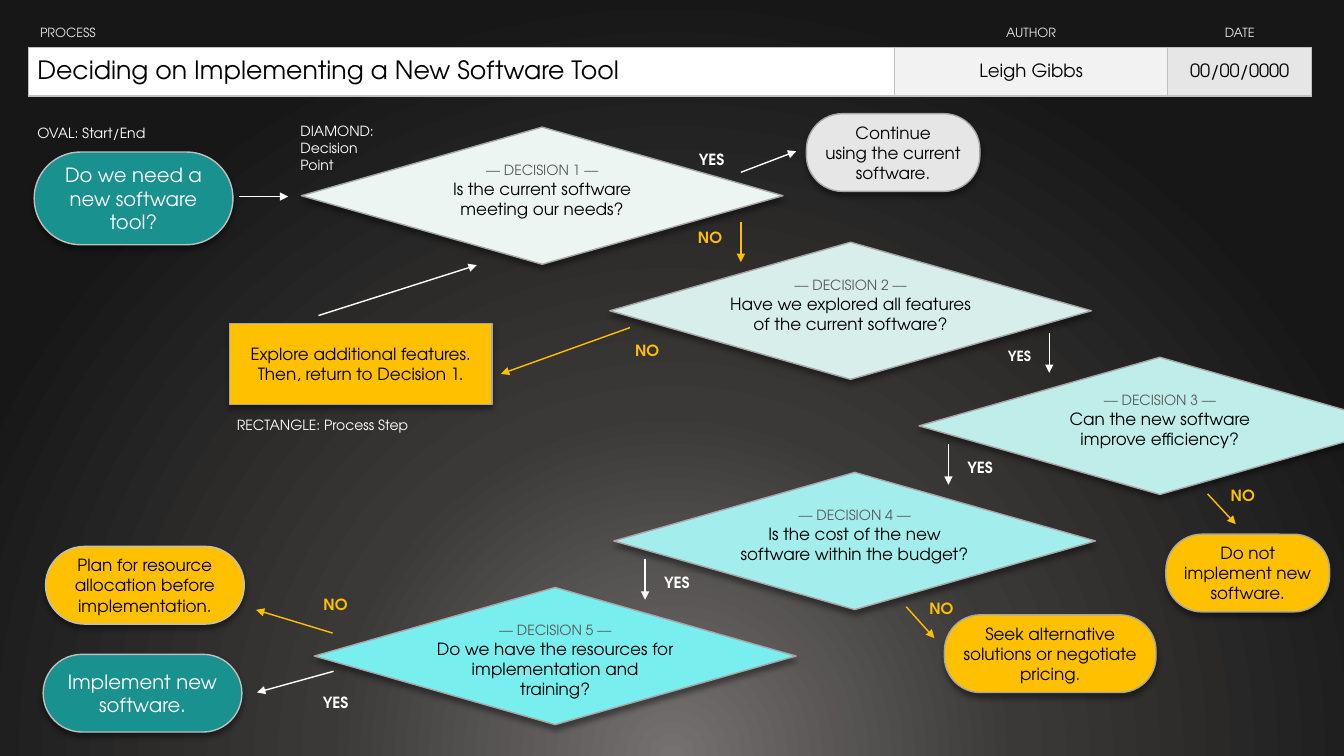
from pptx import Presentation
from pptx.dml.color import RGBColor
from pptx.enum.shapes import MSO_CONNECTOR, MSO_SHAPE
from pptx.enum.text import MSO_ANCHOR, PP_ALIGN
from pptx.oxml import parse_xml
from pptx.oxml.ns import qn
from pptx.util import Pt

FONT = "TeX Gyre Adventor"
NAMESPACE = 'xmlns:a="http://schemas.openxmlformats.org/drawingml/2006/main"'
NO_STYLE = "{2D5ABB26-0587-4C30-8999-92F81FD0307C}"
COLORS = {
    "white": "FFFFFF", "black": "000000", "teal": "18918F", "gold": "FFC000",
    "pale": "E7E6E6", "caption": "595959", "outline": "A6A6A6", "border": "BFBFBF",
    "title": "FFFFFF", "author": "F2F2F2", "date": "E6E6E6",
    "glow": "767171", "charcoal": "3B3838", "night": "181717",
    "decision 1": "EDF5F3", "decision 2": "D7EEEB", "decision 3": "BFEEEA",
    "decision 4": "A3EEED", "decision 5": "79EEEE",
}
DECISION_SIZE = (344, 98)
DECISION_TOP, DECISION_STEP = 90.8, 82.2
DECISIONS = [
    (215.3, "Is the current software meeting our needs?"),
    (435.6, "Have we explored all features of the current software?"),
    (656.5, "Can the new software improve efficiency?"),
    (438.5, "Is the cost of the new software within the budget?"),
    (224.6, "Do we have the resources for implementation and training?"),
]
OVALS = [
    ((24.4, 108.6, 142, 66.2), ["Do we need a new software tool?"], "teal", 14, 0.5),
    ((576, 81.2, 124, 55.5), ["Continue", "using the current software."], "pale", 12, 0.464),
    ((832.8, 381.6, 117, 55.5), ["Do not implement new software."], "gold", 12, 0.464),
    ((674.6, 439.2, 151.2, 55.5), ["Seek alternative solutions or negotiate pricing."], "gold", 12, 0.464),
    ((30.8, 467.4, 142, 55.5), ["Implement new software."], "teal", 14, 0.5),
    ((32.5, 390.3, 142, 55.5), ["Plan for resource allocation before implementation."], "gold", 12, 0.5),
]
BRANCHES = [
    ("YES", (491, 103, 34.6, 20.9), (529.2, 123.1), (568.8, 108), 11),
    ("NO", (488.9, 159.1, 36.7, 20.9), (529.2, 158.4), (529.2, 187.2), 11),
    ("NO", (445, 234, 34.6, 32.4), (450, 234), (357.8, 267.1), 11),
    ("YES", (709.9, 243.4, 36.7, 20.9), (749.5, 237.6), (749.5, 266.4), 10),
    ("YES", (681.8, 323.3, 36.7, 20.9), (677.5, 317.5), (677.5, 346.3), 11),
    ("NO", (870.5, 337.7, 34.6, 32.4), (862.6, 352.8), (882.7, 374.4), 11),
    ("YES", (465.1, 405.4, 36.7, 20.9), (460.8, 399.6), (460.8, 428.4), 11),
    ("NO", (655.2, 418.3, 34.6, 32.4), (647.3, 433.4), (667.4, 455.8), 11),
    ("NO", (216, 415.4, 47.5, 32.4), (237.6, 452.2), (182.9, 435.6), 11),
    ("YES", (222.5, 488.2, 34.6, 26.6), (238.3, 479.5), (183.6, 494.6), 11),
]
ARROWS = [((170.6, 140.4), (205.9, 140.4)), ((227.5, 225.4), (340.6, 189.4))]
NOTES = [
    ((25.2, 84.2, 99.4, 21.6), ["OVAL: Start/End"]),
    ((213.1, 84.2, 66.2, 43.2), ["DIAMOND:", "Decision", "Point"]),
    ((167.8, 293, 136.8, 21.6), ["RECTANGLE: Process Step"]),
]


def rgb(name):
    """Return the named colour."""
    return RGBColor.from_string(COLORS[name])


def write_text(frame, lines, align, margin=1.5, anchor=MSO_ANCHOR.MIDDLE):
    """Fill a text frame with (text, size, colour, bold) lines."""
    frame.word_wrap = True
    frame.vertical_anchor = anchor
    frame.margin_left = frame.margin_right = Pt(margin)
    frame.margin_top = frame.margin_bottom = Pt(margin)
    for index, (text, size, color, bold) in enumerate(lines):
        paragraph = frame.paragraphs[0] if index == 0 else frame.add_paragraph()
        paragraph.text = text
        paragraph.alignment = align
        style_font(paragraph, size, color, bold)


def style_font(paragraph, size, color, bold=False):
    """Set the font of a paragraph."""
    font = paragraph.font
    font.name, font.size, font.bold = FONT, Pt(size), bold
    font.color.rgb = rgb(color)


def add_block(slide, kind, box, fill, outline="outline"):
    """Add an outlined shape with a soft shadow below it."""
    shape = slide.shapes.add_shape(kind, *map(Pt, box))
    shape.fill.solid()
    shape.fill.fore_color.rgb = rgb(fill)
    shape.line.color.rgb = rgb(outline)
    shape.line.width = Pt(1)
    shape.shadow.inherit = False
    effects = shape._element.spPr.find(qn("a:effectLst"))
    effects.append(parse_xml(
        f'<a:outerShdw {NAMESPACE} blurRad="{Pt(4)}" dist="{Pt(3)}" dir="5400000" algn="t" rotWithShape="0">'
        f'<a:srgbClr val="{COLORS["black"]}"><a:alpha val="40000"/></a:srgbClr></a:outerShdw>'))
    return shape


def add_decision(slide, box, number, question):
    """Add a numbered decision diamond."""
    shape = add_block(slide, MSO_SHAPE.FLOWCHART_DECISION, box, f"decision {number}")
    lines = [(f"–– DECISION {number} ––", 10, "caption", False), (question, 12, "black", False)]
    write_text(shape.text_frame, lines, PP_ALIGN.CENTER, 0, MSO_ANCHOR.TOP)


def add_oval(slide, box, texts, fill, size, roundness):
    """Add a rounded start or end step."""
    outline = "border" if roundness == 0.5 else "outline"
    shape = add_block(slide, MSO_SHAPE.ROUNDED_RECTANGLE, box, fill, outline)
    shape.adjustments[0] = roundness
    color = "white" if fill == "teal" else "black"
    write_text(shape.text_frame, [(text, size, color, False) for text in texts], PP_ALIGN.CENTER)


def add_process(slide, box, text):
    """Add a rectangular process step."""
    shape = add_block(slide, MSO_SHAPE.FLOWCHART_PROCESS, box, "gold")
    write_text(shape.text_frame, [(text, 12, "black", False)], PP_ALIGN.CENTER)


def add_label(slide, box, texts, size=10, color="white", bold=False, align=PP_ALIGN.LEFT):
    """Add a text label."""
    label = slide.shapes.add_textbox(*map(Pt, box))
    write_text(label.text_frame, [(text, size, color, bold) for text in texts], align)


def add_arrow(slide, start, end, color="white"):
    """Add a straight arrow."""
    arrow = slide.shapes.add_connector(MSO_CONNECTOR.STRAIGHT, *map(Pt, start + end))
    arrow.line.color.rgb = rgb(color)
    arrow.line.width = Pt(1)
    arrow.line._get_or_add_ln().append(parse_xml(f'<a:tailEnd {NAMESPACE} type="triangle"/>'))
    arrow._element.spPr.append(parse_xml(f"<a:effectLst {NAMESPACE}/>"))


def add_branch(slide, answer, box, start, end, size):
    """Add an arrow with its answer."""
    color = "gold" if answer == "NO" else "white"
    add_arrow(slide, start, end, color)
    add_label(slide, box, [answer], size, color, True, PP_ALIGN.CENTER)


def add_borders(cell, sides):
    """Draw cell borders, given as a width for each side."""
    properties = cell._tc.get_or_add_tcPr()
    for index, (side, width) in enumerate(sides.items()):
        properties.insert(index, parse_xml(
            f'<a:{side} {NAMESPACE} w="{Pt(width)}"><a:solidFill>'
            f'<a:srgbClr val="{COLORS["border"]}"/></a:solidFill></a:{side}>'))


def add_header(slide, box):
    """Add the table with process, author and date."""
    table = slide.shapes.add_table(2, 3, *map(Pt, box)).table
    table.first_row = table.horz_banding = False
    table._tbl.tblPr.find(qn("a:tableStyleId")).text = NO_STYLE
    for row, height in zip(table.rows, (20, box[3] - 20)):
        row.height = Pt(height)
    columns = [
        (box[2] - 298, "PROCESS", "Deciding on Implementing a New Software Tool", "title", 18),
        (195, "AUTHOR", "Leigh Gibbs", "author", 13),
        (103, "DATE", "00/00/0000", "date", 13),
    ]
    for index, (width, heading, value, fill, value_size) in enumerate(columns):
        table.columns[index].width = Pt(width)
        for row, (text, size, color) in enumerate([(heading, 9, "pale"), (value, value_size, "black")]):
            cell = table.cell(row, index)
            cell.text = text
            cell.vertical_anchor = MSO_ANCHOR.MIDDLE
            cell.margin_left = Pt((8.4, 6.5)[row] if index == 0 else 0.7)
            cell.margin_right = cell.margin_top = Pt(0.7)
            cell.margin_bottom = Pt(0)
            paragraph = cell.text_frame.paragraphs[0]
            paragraph.alignment = PP_ALIGN.CENTER if index else PP_ALIGN.LEFT
            style_font(paragraph, size, color)
            if row == 0:
                cell.fill.background()
                add_borders(cell, {"lnB": 1})
            else:
                cell.fill.solid()
                cell.fill.fore_color.rgb = rgb(fill)
                add_borders(cell, {"lnL": 1, "lnR": 1, "lnT": 1, "lnB": 2.25})


def paint_background(slide):
    """Paint a glow that rises from below the slide."""
    fill = slide.background.fill
    fill.gradient()
    gradient = slide._element.cSld.find(".//" + qn("a:gradFill"))
    stops = "".join(f'<a:gs pos="{position}000"><a:srgbClr val="{COLORS[name]}"/></a:gs>'
                    for position, name in ((0, "glow"), (45, "charcoal"), (100, "night")))
    gradient.getparent().replace(gradient, parse_xml(
        f'<a:gradFill {NAMESPACE} rotWithShape="1"><a:gsLst>{stops}</a:gsLst><a:path path="circle">'
        '<a:fillToRect l="50000" t="130000" r="50000" b="-30000"/></a:path></a:gradFill>'))


def main():
    """Build the flowchart slide."""
    presentation = Presentation()
    presentation.slide_width, presentation.slide_height = Pt(960), Pt(540)
    slide = presentation.slides.add_slide(presentation.slide_layouts[6])
    paint_background(slide)
    add_header(slide, (20.2, 13.7, 916.8, 55))
    for index, (left, question) in enumerate(DECISIONS):
        top = DECISION_TOP + index * DECISION_STEP
        add_decision(slide, (left, top, *DECISION_SIZE), index + 1, question)
    add_process(slide, (164, 231.2, 187.5, 57.6), "Explore additional features. Then, return to Decision 1.")
    for function, items in ((add_oval, OVALS), (add_label, NOTES), (add_arrow, ARROWS), (add_branch, BRANCHES)):
        for item in items:
            function(slide, *item)
    presentation.save("out.pptx")


if __name__ == "__main__":
    main()
